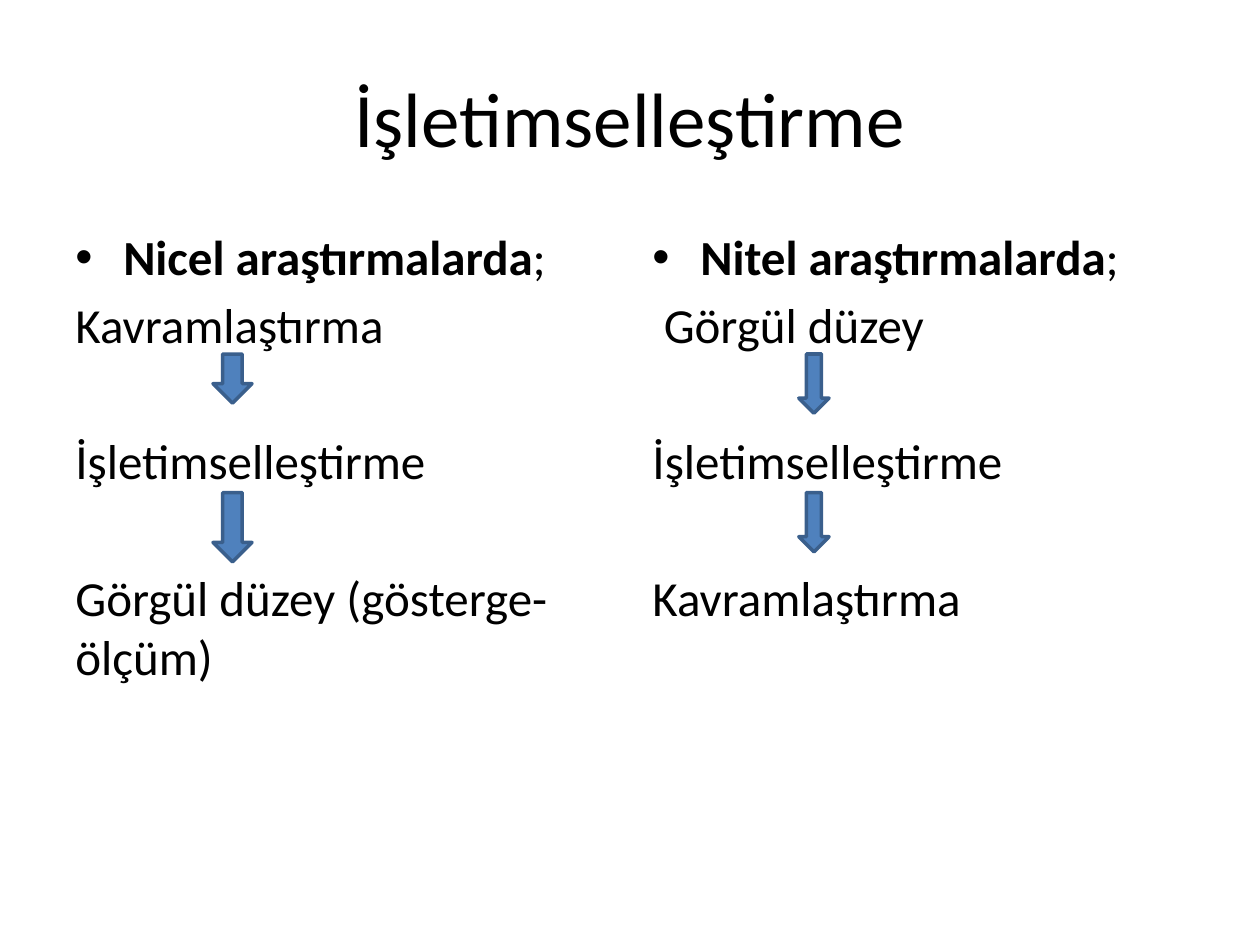
from dataclasses import dataclass

from lxml import etree
from pptx import Presentation
from pptx import util as u
from pptx.dml.color import RGBColor
from pptx.enum import shapes, text
from pptx.oxml import ns


@dataclass(frozen=True)
class Theme:
    font: str = "Calibri"
    ink: RGBColor = RGBColor(0x00, 0x00, 0x00)
    arrow_fill: RGBColor = RGBColor(0x4F, 0x81, 0xBD)
    arrow_line: RGBColor = RGBColor(0x3A, 0x5F, 0x8C)
    title_size: u.Pt = u.Pt(44)
    body_size: u.Pt = u.Pt(28)


theme = Theme()


def set_font(para, size):
    para.font.name = theme.font
    para.font.size = size
    para.font.color.rgb = theme.ink


def set_indent(para, left, first=0, bullet=None):
    properties = para._p.get_or_add_pPr()
    properties.set("marL", str(u.Inches(left)))
    properties.set("indent", str(u.Inches(first)))
    if bullet:
        font = etree.SubElement(properties, ns.qn("a:buFont"))
        font.set("typeface", "Arial")
        etree.SubElement(properties, ns.qn("a:buChar")).set("char", bullet)


deck = Presentation()
deck.slide_width, deck.slide_height = u.Inches(10), u.Inches(7.5)
page = deck.slides.add_slide(deck.slide_layouts[5])

# Title
title = page.shapes.title
title.left, title.top = u.Inches(0.5), u.Inches(0.3)
title.width, title.height = u.Inches(9), u.Inches(1.25)
title.text_frame.text = "İşletimselleştirme"
title.text_frame.vertical_anchor = text.MSO_ANCHOR.MIDDLE
title_para = title.text_frame.paragraphs[0]
title_para.alignment = text.PP_ALIGN.CENTER
set_font(title_para, theme.title_size)

# Columns: left edge, heading, steps with their indents, arrow left, width and heights
columns = [
    (0.5, "Nicel araştırmalarda",
     [("Kavramlaştırma", 0), ("İşletimselleştirme", 0),
      ("Görgül düzey (gösterge-ölçüm)", 0)],
     1.69, 0.31, (0.39, 0.55)),
    (5.08, "Nitel araştırmalarda",
     [("Görgül düzey", 0.09), ("İşletimselleştirme", 0), ("Kavramlaştırma", 0)],
     6.34, 0.24, (0.47, 0.47)),
]
arrow_tops = (2.81, 3.91)
heading_gap, step_gap = u.Pt(5.1), u.Pt(44.4)

for left, heading, steps, arrow_left, arrow_width, arrow_heights in columns:
    box = page.shapes.add_textbox(
        u.Inches(left), u.Inches(1.75), u.Inches(4.42), u.Inches(4.95))
    frame = box.text_frame
    frame.word_wrap = True

    # Bulleted heading
    para = frame.paragraphs[0]
    set_indent(para, 0.38, -0.38, "•")
    set_font(para, theme.body_size)
    span = para.add_run()
    span.text = heading
    span.font.bold = True
    para.add_run().text = ";"

    # Steps, spaced to leave room for the arrows
    for number, (step, indent) in enumerate(steps):
        para = frame.add_paragraph()
        para.text = step
        set_indent(para, indent)
        para.space_before = step_gap if number else heading_gap
        set_font(para, theme.body_size)

    # Arrows between the steps
    for top, height in zip(arrow_tops, arrow_heights):
        arrow = page.shapes.add_shape(
            shapes.MSO_SHAPE.DOWN_ARROW, u.Inches(arrow_left), u.Inches(top),
            u.Inches(arrow_width), u.Inches(height))
        arrow.shadow.inherit = False
        arrow.fill.solid()
        arrow.fill.fore_color.rgb = theme.arrow_fill
        arrow.line.color.rgb = theme.arrow_line
        arrow.line.width = u.Pt(2)

deck.save("out.pptx")
